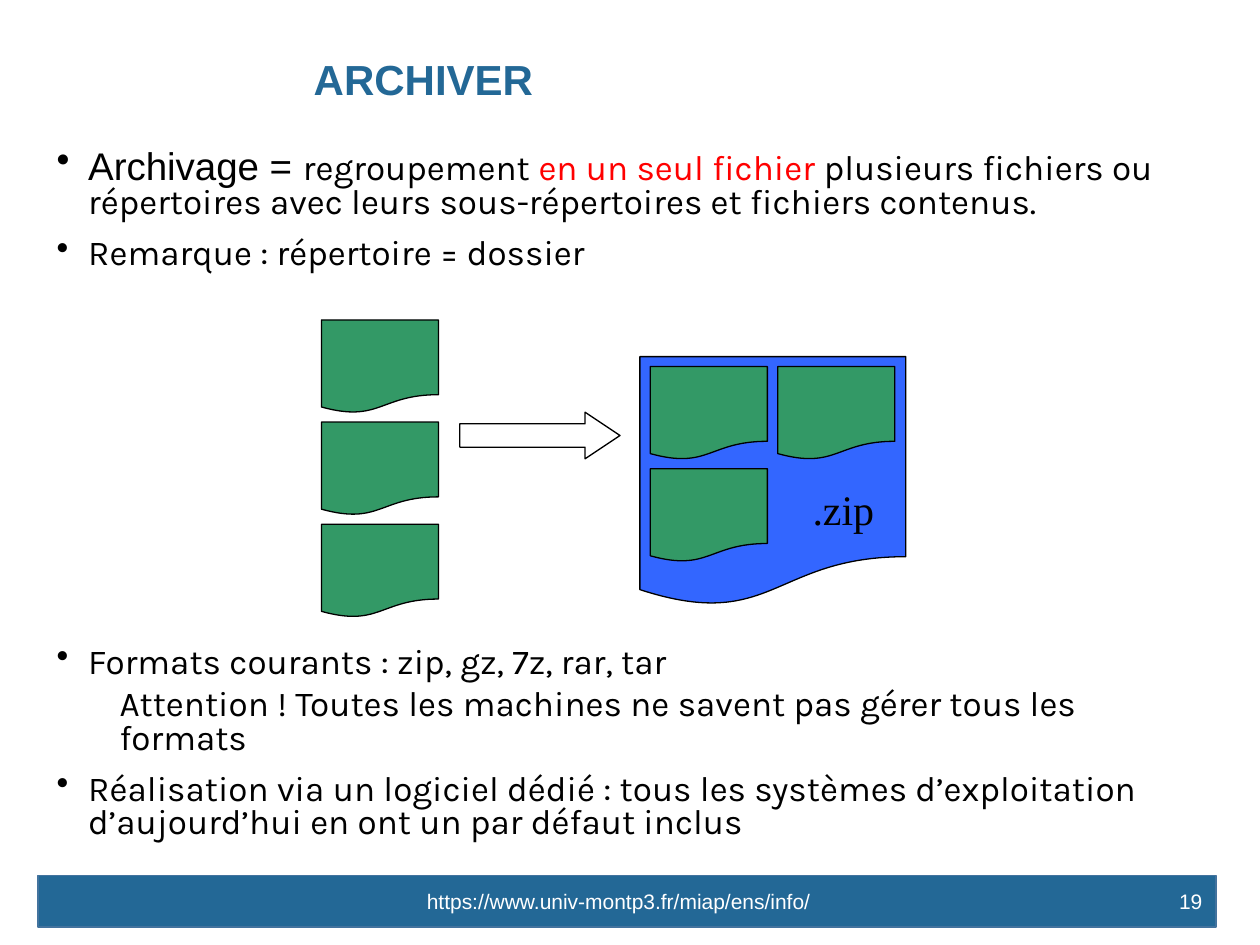
from lxml import etree
from pptx import Presentation
from pptx.dml.color import RGBColor
from pptx.enum.shapes import MSO_SHAPE
from pptx.enum.text import MSO_ANCHOR, PP_ALIGN
from pptx.oxml.ns import qn
from pptx.util import Cm, Pt

RECTANGLE = MSO_SHAPE.RECTANGLE
RIGHT_ARROW = MSO_SHAPE.RIGHT_ARROW
DOCUMENT = MSO_SHAPE.FLOWCHART_DOCUMENT
TOP, MIDDLE = MSO_ANCHOR.TOP, MSO_ANCHOR.MIDDLE
LEFT, CENTER, RIGHT = PP_ALIGN.LEFT, PP_ALIGN.CENTER, PP_ALIGN.RIGHT

BLACK = RGBColor(0x00, 0x00, 0x00)
WHITE = RGBColor(0xFF, 0xFF, 0xFF)
RED = RGBColor(0xFF, 0x00, 0x00)
BANNER_BLUE = RGBColor(0x23, 0x68, 0x96)
BANNER_EDGE = RGBColor(0x43, 0x73, 0x9E)
ARCHIVE_BLUE = RGBColor(0x33, 0x66, 0xFF)
FILE_GREEN = RGBColor(0x33, 0x99, 0x66)

TITLE = "ARCHIVER"
URL = "https://www.univ-montp3.fr/miap/ens/info/"
PAGE = "19"
ARCHIVE_LABEL = ".zip"

DIAGRAM_GAP = 214
POINTS = [
    {"before": 0, "runs": [
        ("Archivage = ", {"font": "Arial", "size": 22}),
        ("regroupement ", {}),
        ("en un seul fichier", {"color": RED}),
        (" plusieurs fichiers ou répertoires avec leurs sous-répertoires"
         " et fichiers contenus.", {}),
    ]},
    {"before": 10, "runs": [("Remarque : répertoire = dossier", {})]},
    {"before": DIAGRAM_GAP, "runs": [("Formats courants : zip, gz, 7z, rar, tar", {})]},
    {"before": 5, "level": 1, "runs": [
        ("Attention ! Toutes les machines ne savent pas gérer tous les formats", {}),
    ]},
    {"before": 10, "runs": [
        ("Réalisation via un logiciel dédié : tous les systèmes d’exploitation"
         " d’aujourd’hui en ont un par défaut inclus", {}),
    ]},
]

FILE_SIZE = (2.36, 1.88)
FILE_STEP = (2.57, 2.06)
LOOSE_FILES = ((6.48, 6.45), [(0, 0), (0, 1), (0, 2)])
ARCHIVED_FILES = ((13.11, 7.39), [(0, 0), (1, 0), (0, 1)])


def add_text(paragraph, text, font="Karla", size=20, color=BLACK, bold=False):
    run = paragraph.add_run()
    run.text = text
    run.font.name = font
    run.font.size = Pt(size)
    run.font.color.rgb = color
    run.font.bold = bold


def add_box(shapes, left, top, width, height, anchor=TOP, align=LEFT):
    frame = shapes.add_textbox(Cm(left), Cm(top), Cm(width), Cm(height)).text_frame
    frame.word_wrap = True
    frame.vertical_anchor = anchor
    frame.paragraphs[0].alignment = align
    return frame


def add_figure(shapes, kind, left, top, width, height,
               fill=None, line=BLACK, line_width=0.75):
    figure = shapes.add_shape(kind, Cm(left), Cm(top), Cm(width), Cm(height))
    figure.shadow.inherit = False
    if fill is None:
        figure.fill.background()
    else:
        figure.fill.solid()
        figure.fill.fore_color.rgb = fill
    figure.line.color.rgb = line
    figure.line.width = Pt(line_width)
    return figure


def add_files(shapes, origin, cells):
    for column, row in cells:
        add_figure(shapes, DOCUMENT, origin[0] + column * FILE_STEP[0],
                   origin[1] + row * FILE_STEP[1], *FILE_SIZE, fill=FILE_GREEN)


def set_title(title):
    title.left, title.top, title.width, title.height = Cm(6.07), Cm(0.48), Cm(19.08), Cm(2.36)
    title.text_frame.vertical_anchor = MIDDLE
    heading = title.text_frame.paragraphs[0]
    heading.alignment = LEFT
    heading.line_spacing = 0.9
    add_text(heading, TITLE, font="Arial", size=24, color=BANNER_BLUE, bold=True)


def add_points(shapes):
    body = add_box(shapes, 0.89, 2.92, 23.6, 14.17)
    for index, point in enumerate(POINTS):
        paragraph = body.add_paragraph() if index else body.paragraphs[0]
        level = point.get("level", 0)
        properties = paragraph._p.get_or_add_pPr()
        properties.set("marL", str(Cm(1.27 if level else 0.64)))
        properties.set("indent", str(0 if level else -Cm(0.64)))
        if not level:
            etree.SubElement(properties, qn("a:buChar")).set("char", "•")
        paragraph.level = level
        paragraph.line_spacing = 0.8
        paragraph.space_before = Pt(point["before"])
        for text, style in point["runs"]:
            add_text(paragraph, text, **style)


def add_diagram(shapes):
    diagram = shapes.add_group_shape().shapes
    arrow = add_figure(diagram, RIGHT_ARROW, 9.27, 8.31, 3.23, 0.94)
    arrow.adjustments[0] = 0.5
    arrow.adjustments[1] = 0.75
    add_figure(diagram, DOCUMENT, 12.9, 7.19, 5.36, 5.03, fill=ARCHIVE_BLUE)
    for origin, cells in (ARCHIVED_FILES, LOOSE_FILES):
        add_files(diagram, origin, cells)
    label = add_box(diagram, 16.13, 9.63, 1.9, 1.14)
    add_text(label.paragraphs[0], ARCHIVE_LABEL, font="Times New Roman", size=24)


def add_footer(shapes):
    add_figure(shapes, RECTANGLE, 0.76, 17.65, 23.75, 1.04,
               fill=BANNER_BLUE, line=BANNER_EDGE, line_width=1)
    for text, left, width, align in ((PAGE, 18.77, 5.72, RIGHT), (URL, 7.98, 8.99, CENTER)):
        frame = add_box(shapes, left, 17.65, width, 1.02, anchor=MIDDLE, align=align)
        add_text(frame.paragraphs[0], text, font="Arial", size=12, color=WHITE)


def main():
    presentation = Presentation()
    presentation.slide_width, presentation.slide_height = Cm(25.4), Cm(19.05)
    slide = presentation.slides.add_slide(presentation.slide_layouts[5])
    set_title(slide.shapes.title)
    add_points(slide.shapes)
    add_footer(slide.shapes)
    add_diagram(slide.shapes)
    presentation.save("out.pptx")


if __name__ == "__main__":
    main()
